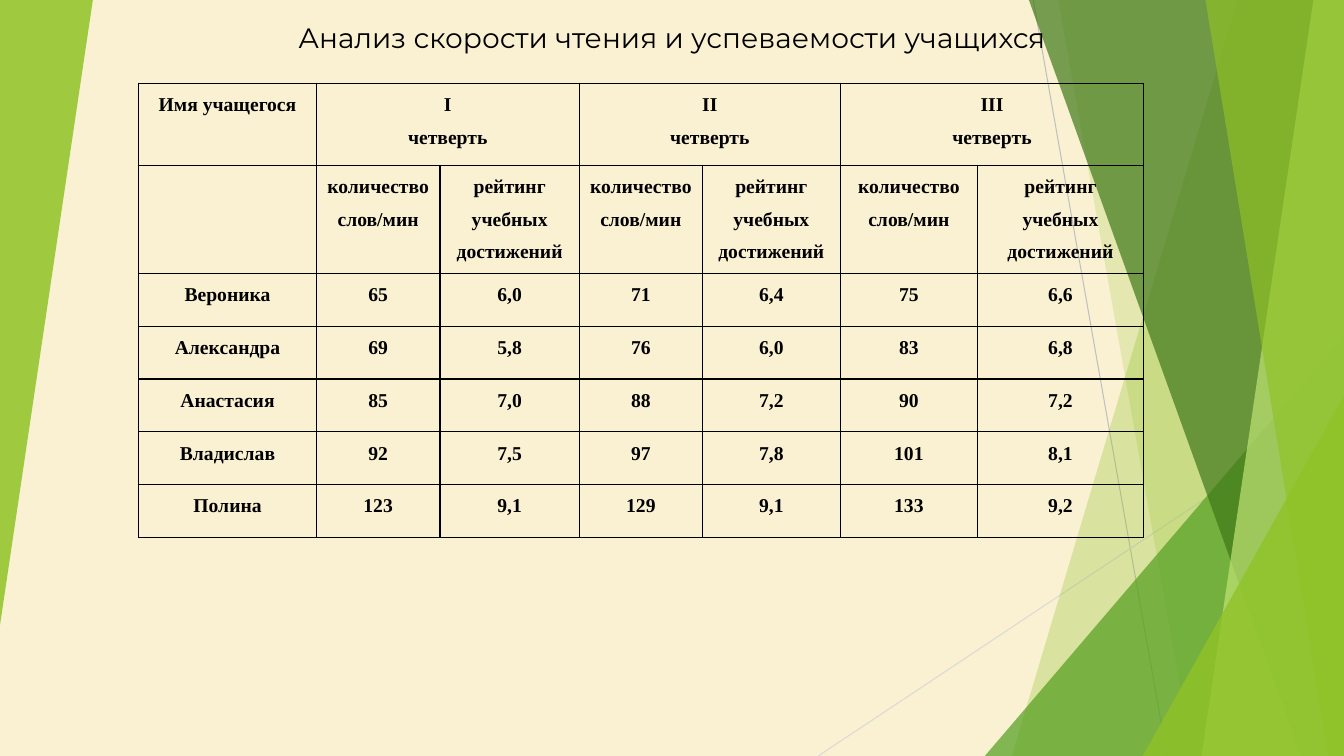
from dataclasses import dataclass

from lxml.etree import SubElement
from pptx import Presentation
from pptx.dml.color import RGBColor
from pptx.enum.shapes import MSO_CONNECTOR as Connector, MSO_SHAPE as Shape
from pptx.enum.text import MSO_ANCHOR as Anchor, PP_ALIGN as Align
from pptx.oxml.ns import qn
from pptx.util import Cm, Pt


@dataclass(frozen=True)
class Theme:
    cream: str = "FAF1D2"
    lime: str = "90C226"
    green: str = "54A021"
    forest: str = "3F7819"
    pale_lime: str = "C0E474"
    ray_grey: str = "BFBFBF"
    light_grey: str = "D9D9D9"
    ink: str = "000000"
    title_font: str = "Montserrat"
    table_font: str = "Times New Roman"
    title_size: int = 20
    table_size: int = 14
    line_width: float = 0.75
    border_width: float = 1


theme = Theme()
WIDTH, HEIGHT = 33.87, 19.05


def paint(fill, color, opacity):
    fill.solid()
    fill.fore_color.rgb = RGBColor.from_string(color)
    tint = fill._xPr.find(qn("a:solidFill"))[0]
    SubElement(tint, qn("a:alpha"), val=str(opacity * 1000))


def write(paragraph, text, font_name, size, bold=False):
    paragraph.alignment = Align.CENTER
    run = paragraph.add_run()
    run.text = text
    run.font.name = font_name
    run.font.size = Pt(size)
    run.font.bold = bold
    run.font.color.rgb = RGBColor.from_string(theme.ink)


presentation = Presentation()
presentation.slide_width, presentation.slide_height = Cm(WIDTH), Cm(HEIGHT)
slide = presentation.slides.add_slide(presentation.slide_layouts[6])
slide.background.fill.solid()
slide.background.fill.fore_color.rgb = RGBColor.from_string(theme.cream)

# Thin rays behind the facets
rays = [
    (26.04, 0, 29.41, HEIGHT, theme.ray_grey),
    (WIDTH, 10.24, 20.62, HEIGHT, theme.light_grey),
]
for *ends, color in rays:
    ray = slide.shapes.add_connector(Connector.STRAIGHT, *map(Cm, ends))
    ray.line.width = Pt(theme.line_width)
    ray.line.color.rgb = RGBColor.from_string(color)
    SubElement(ray._element.spPr, qn("a:effectLst"))

# Facets, back to front: a band reaches the right edge from (top x, bottom x),
# a wedge is a right triangle given as (left, top, width, height, rotation)
facets = [
    ((31.19, 25.5), theme.lime, 30),
    ((26.67, 30.05), theme.lime, 20),
    ((24.82, 8.46, 9.05, 10.59, 0), theme.green, 72),
    ((25.93, 32.79), theme.forest, 70),
    ((33.1, 30.28), theme.pale_lime, 70),
    ((30.38, 33.48), theme.lime, 65),
    ((28.8, 9.98, 5.07, 9.07, 0), theme.lime, 80),
    ((0, 0, 2.34, 15.75, 180), theme.lime, 85),
]
for geometry, color, opacity in facets:
    if len(geometry) == 2:
        top_x, bottom_x = geometry
        outline = slide.shapes.build_freeform(Cm(top_x), Cm(0))
        corners = [(WIDTH, 0), (WIDTH, HEIGHT), (bottom_x, HEIGHT)]
        outline.add_line_segments([(Cm(x), Cm(y)) for x, y in corners])
        facet = outline.convert_to_shape()
    else:
        *box, rotation = geometry
        facet = slide.shapes.add_shape(Shape.ISOSCELES_TRIANGLE, *map(Cm, box))
        facet.adjustments[0] = 1
        facet.rotation = rotation
    facet.shadow.inherit = False
    facet.line.fill.background()
    paint(facet.fill, color, opacity)

# Title
title = slide.shapes.add_textbox(Cm(0), Cm(0.08), Cm(WIDTH), Cm(1.4)).text_frame
title.word_wrap = True
title.vertical_anchor = Anchor.BOTTOM
write(title.paragraphs[0], "Анализ скорости чтения и успеваемости учащихся",
      theme.title_font, theme.title_size)

# Reading speed and grades; a line break starts a new paragraph
words, rating = "количество слов/мин", "рейтинг учебных достижений"
rows = [
    ["Имя учащегося", "I\nчетверть", "", "II\nчетверть", "", "III\nчетверть", ""],
    ["", words, rating, words, rating, "количество\nслов/мин", rating],
    ["Вероника", "65", "6,0", "71", "6,4", "75", "6,6"],
    ["Александра", "69", "5,8", "76", "6,0", "83", "6,8"],
    ["Анастасия", "85", "7,0", "88", "7,2", "90", "7,2"],
    ["Владислав", "92", "7,5", "97", "7,8", "101", "8,1"],
    ["Полина", "123", "9,1", "129", "9,1", "133", "9,2"],
]
column_widths = [4.47, 3.12, 3.51, 3.1, 3.48, 3.45, 4.19]
row_heights = [2.07, 2.72] + [1.33] * 5
grades = slide.shapes.add_table(
    len(rows), len(column_widths), Cm(3.5), Cm(2.1),
    Cm(sum(column_widths)), Cm(sum(row_heights))).table
grades.first_row = grades.horz_banding = False
for column, width in zip(grades.columns, column_widths):
    column.width = Cm(width)
for row, height in zip(grades.rows, row_heights):
    row.height = Cm(height)
for quarter in (1, 3, 5):
    grades.cell(0, quarter).merge(grades.cell(0, quarter + 1))

for r, row in enumerate(rows):
    for c, text in enumerate(row):
        cell = grades.cell(r, c)
        cell.margin_left = cell.margin_right = Cm(0.18)
        cell.margin_top = cell.margin_bottom = Cm(0)
        properties = cell._tc.get_or_add_tcPr()
        for side in ("a:lnL", "a:lnR", "a:lnT", "a:lnB"):
            border = SubElement(properties, qn(side), w=str(Pt(theme.border_width)))
            SubElement(SubElement(border, qn("a:solidFill")), qn("a:srgbClr"), val=theme.ink)
        cell.fill.background()
        for i, part in enumerate(text.split("\n") if text else []):
            frame = cell.text_frame
            paragraph = frame.add_paragraph() if i else frame.paragraphs[0]
            paragraph.line_spacing = 1.5
            write(paragraph, part, theme.table_font, theme.table_size, bold=True)

presentation.save("out.pptx")
